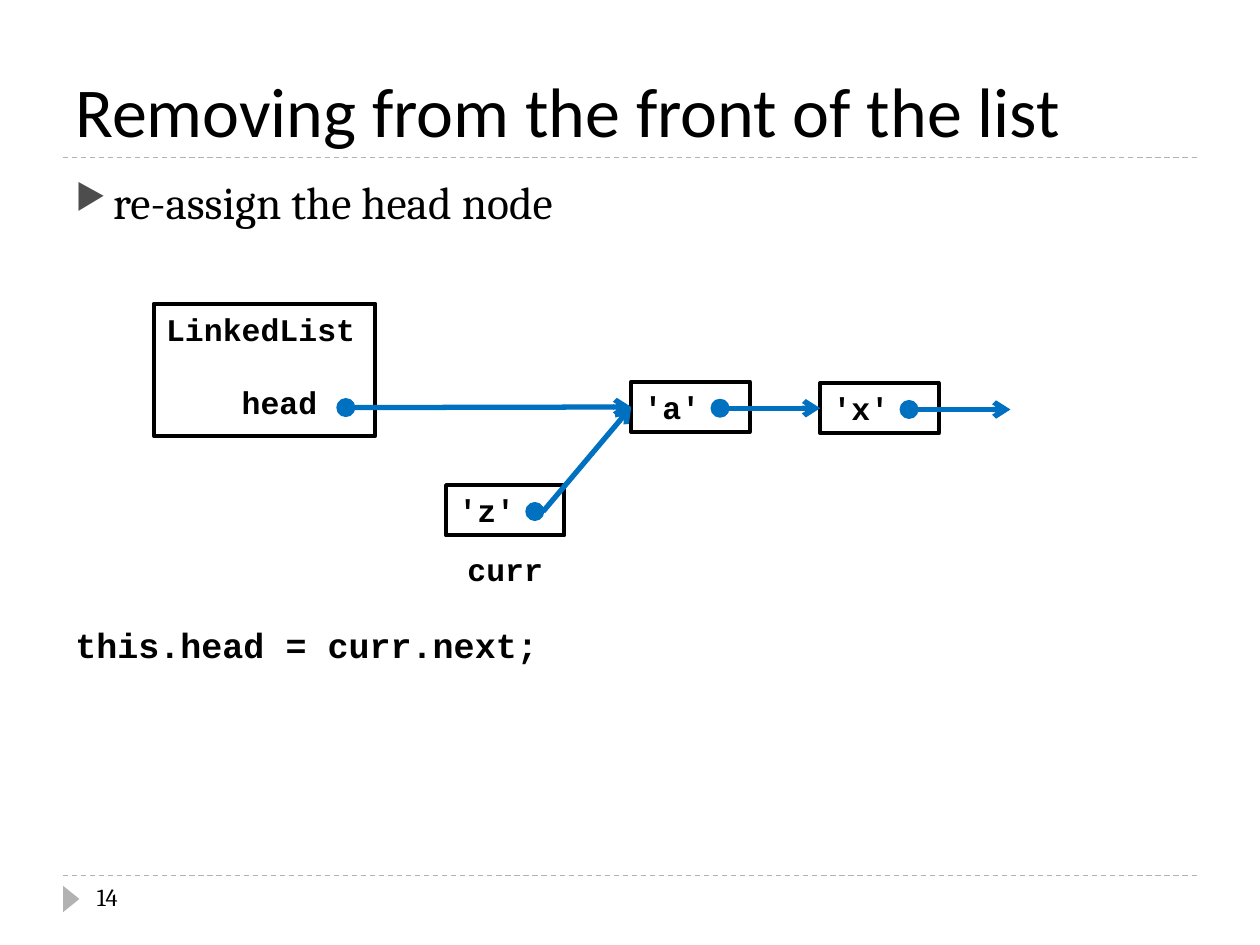
from lxml import etree
from pptx import Presentation, util as u
from pptx.dml.color import RGBColor
from pptx.enum import dml, shapes, text
from pptx.oxml.ns import qn

# Grid of 100 columns by 75 rows; every position below is in grid cells.
COLS, ROWS = 100, 75
WIDTH, HEIGHT = u.Inches(10), u.Inches(7.5)
CELL = WIDTH / COLS

THEME = {
    "ink": "000000", "pointer": "0070C0", "rule": "B2B2B2", "bullet": "4D4D4D",
    "title": ("Calibri", 40, False), "body": ("Cambria", 26, False),
    "number": ("Cambria", 14, False), "code": ("Courier New", 20, True),
    "node": ("Courier New", 18, True),
    "outline": 2.25, "arrow": 3, "dot_line": 1.5, "rule_line": 0.75,
}

# (words, style, (left, top, width, height), anchor, alignment)
TEXTS = {
    "title": ("Removing from the front of the list", "title", (5, 1.7, 90, 10.8), "BOTTOM", "LEFT"),
    "point": ("re-assign the head node", "body", (5, 13.3, 90, 6), "TOP", "LEFT"),
    "code": ("this.head = curr.next;", "code", (5, 49, 90, 4.5), "TOP", "LEFT"),
    "number": ("14", "number", (6.7, 69.5, 21.7, 4), "TOP", "LEFT"),
    "label": ("curr", "node", (35.4, 43.2, 9.4, 4), "TOP", "CENTER"),
}
RULES = (12.5, 69.5)
LIST_BOX = ("LinkedList\nhead", (12.2, 24.1, 17.6, 10.5))
NODE_SIZE = (9.4, 4)
NODES = {"a": (50.1, 30.3), "x": (65.1, 30.4), "z": (35.4, 38.5)}
DOT = 1.3
DOT_OFFSET = (6.4, 1.45)
HEAD_DOT = (26.8, 31.7)
LINKS = [("head", "a"), ("a", "x"), ("x", None), ("z", "a")]
OPEN_END = (80.2, 32.5)

prs = Presentation()
prs.slide_width, prs.slide_height = WIDTH, HEIGHT
s = prs.slides.add_slide(prs.slide_layouts[6])


def cells(values):
    return [round(v * CELL) for v in values]


def rgb(name):
    return RGBColor.from_string(THEME[name])


def write(sp, words, style, anchor="TOP", align="LEFT"):
    font, size, bold = THEME[style]
    tf = sp.text_frame
    tf.word_wrap = True
    tf.vertical_anchor = getattr(text.MSO_ANCHOR, anchor)
    tf.text = words
    for p in tf.paragraphs:
        p.alignment = getattr(text.PP_ALIGN, align)
        for r in p.runs:
            r.font.name, r.font.size, r.font.bold = font, u.Pt(size), bold
            r.font.color.rgb = rgb("ink")
    return tf


def add_shape(kind, box, fill=None, line=None, weight=0):
    sp = s.shapes.add_shape(kind, *cells(box))
    sp.shadow.inherit = False
    if fill:
        sp.fill.solid()
        sp.fill.fore_color.rgb = rgb(fill)
    else:
        sp.fill.background()
    if line:
        sp.line.color.rgb = rgb(line)
        sp.line.width = u.Pt(weight)
    else:
        sp.line.fill.background()
    return sp


def add_line(start, end, color, weight):
    c = s.shapes.add_connector(shapes.MSO_CONNECTOR.STRAIGHT, *cells(start + end))
    c.line.color.rgb = rgb(color)
    c.line.width = u.Pt(weight)
    etree.SubElement(c._element.spPr, qn("a:effectLst"))
    return c


def add_bullet(p):
    pPr = p._p.get_or_add_pPr()
    pPr.set("marL", str(u.Inches(0.3)))
    pPr.set("indent", str(-u.Inches(0.3)))
    color = etree.SubElement(pPr, qn("a:buClr"))
    etree.SubElement(color, qn("a:srgbClr"), val=THEME["bullet"])
    etree.SubElement(pPr, qn("a:buSzPct"), val="76000")
    etree.SubElement(pPr, qn("a:buChar"), char="▶")


# Page furniture and text
for row in RULES:
    add_line((5, row), (95, row), "rule", THEME["rule_line"]).line.dash_style = dml.MSO_LINE.DASH
marker = add_shape(shapes.MSO_SHAPE.ISOSCELES_TRIANGLE, (4.6, 70.7, 2.1, 1.3), "rule")
marker.rotation = 90
frames = {}
for name, (words, style, box, anchor, align) in TEXTS.items():
    frames[name] = write(s.shapes.add_textbox(*cells(box)), words, style, anchor, align)
point = frames["point"].paragraphs[0]
point.space_before = u.Pt(6)
add_bullet(point)

# List object and its nodes
words, box = LIST_BOX
sp = add_shape(shapes.MSO_SHAPE.RECTANGLE, box, None, "ink", THEME["outline"])
field = write(sp, words, "node").paragraphs[1]
field.space_before = u.Pt(20.4)
field._p.get_or_add_pPr().set("marL", str(u.Inches(0.6)))
for value, corner in NODES.items():
    sp = add_shape(shapes.MSO_SHAPE.RECTANGLE, corner + NODE_SIZE, None, "ink", THEME["outline"])
    write(sp, f"'{value}'", "node")

# Pointers: a dot in the source, an arrow to the middle of the target's left side
for source, target in LINKS:
    if source == "head":
        dot = HEAD_DOT
    else:
        dot = tuple(c + d for c, d in zip(NODES[source], DOT_OFFSET))
    add_shape(shapes.MSO_SHAPE.OVAL, dot + (DOT, DOT), "pointer", "pointer", THEME["dot_line"])
    if target:
        left, top = NODES[target]
        end = (left, top + NODE_SIZE[1] / 2)
    else:
        end = OPEN_END
    arrow = add_line((dot[0] + DOT, dot[1] + DOT / 2), end, "pointer", THEME["arrow"])
    etree.SubElement(arrow.line._get_or_add_ln(), qn("a:tailEnd"), type="arrow")

prs.save("out.pptx")
